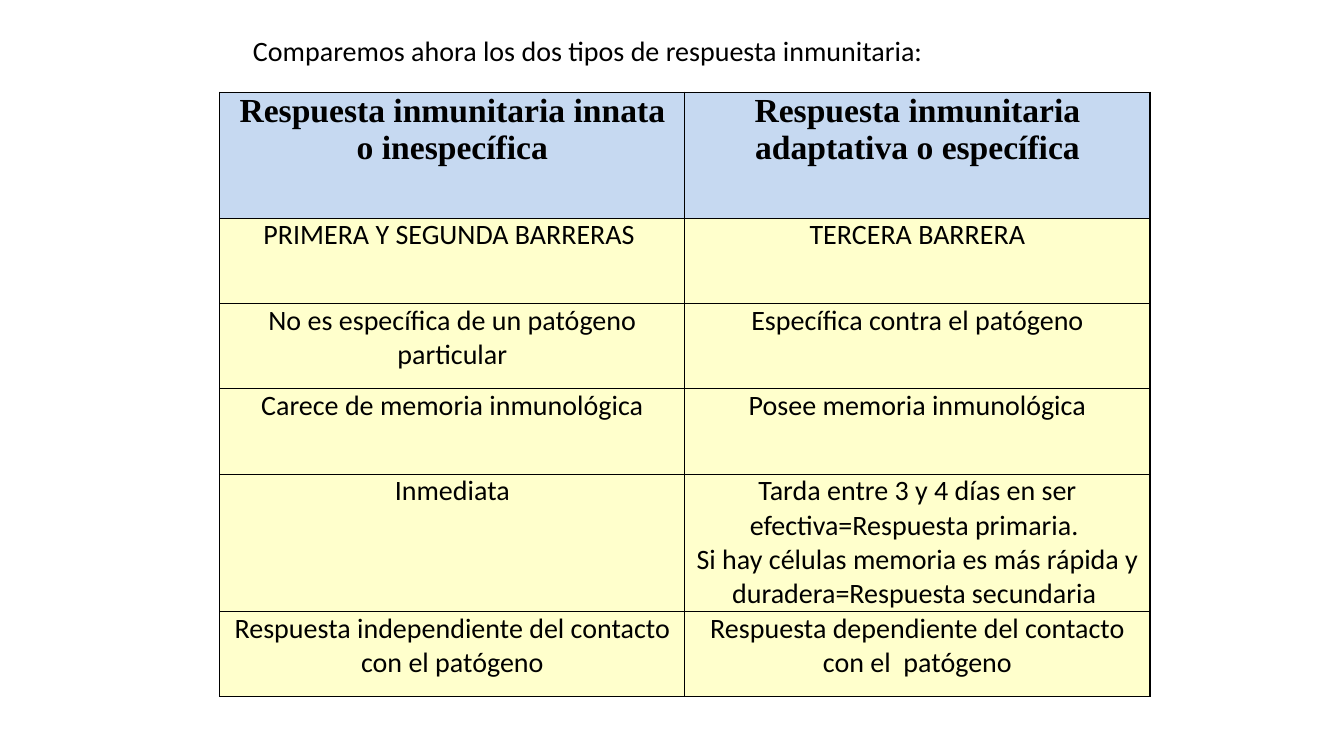
from lxml import etree
from pptx import Presentation
from pptx.dml.color import RGBColor
from pptx.enum import text
from pptx.oxml import ns
from pptx.util import Pt

TITLE = "Comparemos ahora los dos tipos de respuesta inmunitaria:"
ROWS = [
    ("Respuesta inmunitaria innata o inespecífica",
     "Respuesta inmunitaria adaptativa o específica"),
    ("PRIMERA Y SEGUNDA BARRERAS ", " TERCERA BARRERA "),
    ("No es específica de un patógeno particular", "Específica contra el patógeno"),
    ("Carece de memoria inmunológica", "Posee memoria inmunológica"),
    ("Inmediata",
     "Tarda entre 3 y 4 días en ser efectiva=Respuesta primaria. \n"
     "Si hay células memoria es más rápida y duradera=Respuesta secundaria "),
    ("Respuesta independiente del contacto con el patógeno",
     "Respuesta dependiente del contacto con el  patógeno"),
]

BLACK = RGBColor(0x00, 0x00, 0x00)
HEADER_BLUE = RGBColor(0xC6, 0xD9, 0xF1)
BODY_YELLOW = RGBColor(0xFF, 0xFF, 0xCC)

TABLE_LEFT, TABLE_TOP = 157, 65.8
COLUMN_WIDTH = 332.2
HEADER_HEIGHT, BODY_HEIGHT = 90, 61


def format_text(frame, font_name, size, bold, align):
    for para in frame.paragraphs:
        para.alignment = align
        for span in para.runs:
            span.font.name = font_name
            span.font.size = Pt(size)
            span.font.bold = bold
            span.font.color.rgb = BLACK


def add_borders(cell):
    """Draw a 1-point black line on all four sides, placed before the fill."""
    properties = cell._tc.get_or_add_tcPr()
    for index, side in enumerate(("lnL", "lnR", "lnT", "lnB")):
        line = etree.Element(ns.qn(f"a:{side}"), w=str(Pt(1)))
        fill = etree.SubElement(line, ns.qn("a:solidFill"))
        etree.SubElement(fill, ns.qn("a:srgbClr"), val=str(BLACK))
        properties.insert(index, line)


def add_title(page):
    title = page.shapes.title
    title.left, title.top, title.width, title.height = Pt(173.5), Pt(20), Pt(618), Pt(31.5)
    frame = title.text_frame
    frame.text = TITLE
    frame.auto_size = text.MSO_AUTO_SIZE.NONE
    frame.vertical_anchor = text.MSO_ANCHOR.TOP
    format_text(frame, "Calibri", 20, False, text.PP_ALIGN.LEFT)


def add_comparison(page):
    columns = len(ROWS[0])
    height = HEADER_HEIGHT + BODY_HEIGHT * (len(ROWS) - 1)
    table = page.shapes.add_table(
        len(ROWS), columns, Pt(TABLE_LEFT), Pt(TABLE_TOP),
        Pt(COLUMN_WIDTH * columns), Pt(height)).table
    table.horz_banding = False
    for column in table.columns:
        column.width = Pt(COLUMN_WIDTH)
    for row_index, row in enumerate(ROWS):
        header = row_index == 0
        table.rows[row_index].height = Pt(HEADER_HEIGHT if header else BODY_HEIGHT)
        for column_index, words in enumerate(row):
            cell = table.cell(row_index, column_index)
            cell.text_frame.text = words
            cell.margin_left = cell.margin_right = Pt(5.4)
            cell.margin_top = cell.margin_bottom = 0
            cell.fill.solid()
            cell.fill.fore_color.rgb = HEADER_BLUE if header else BODY_YELLOW
            add_borders(cell)
            font_name, size = ("Times New Roman", 24) if header else ("Calibri", 20)
            format_text(cell.text_frame, font_name, size, header, text.PP_ALIGN.CENTER)


def main():
    deck = Presentation()
    deck.slide_width, deck.slide_height = Pt(960), Pt(540)
    page = deck.slides.add_slide(deck.slide_layouts.get_by_name("Title Only"))
    add_title(page)
    add_comparison(page)
    deck.save("out.pptx")


if __name__ == "__main__":
    main()
